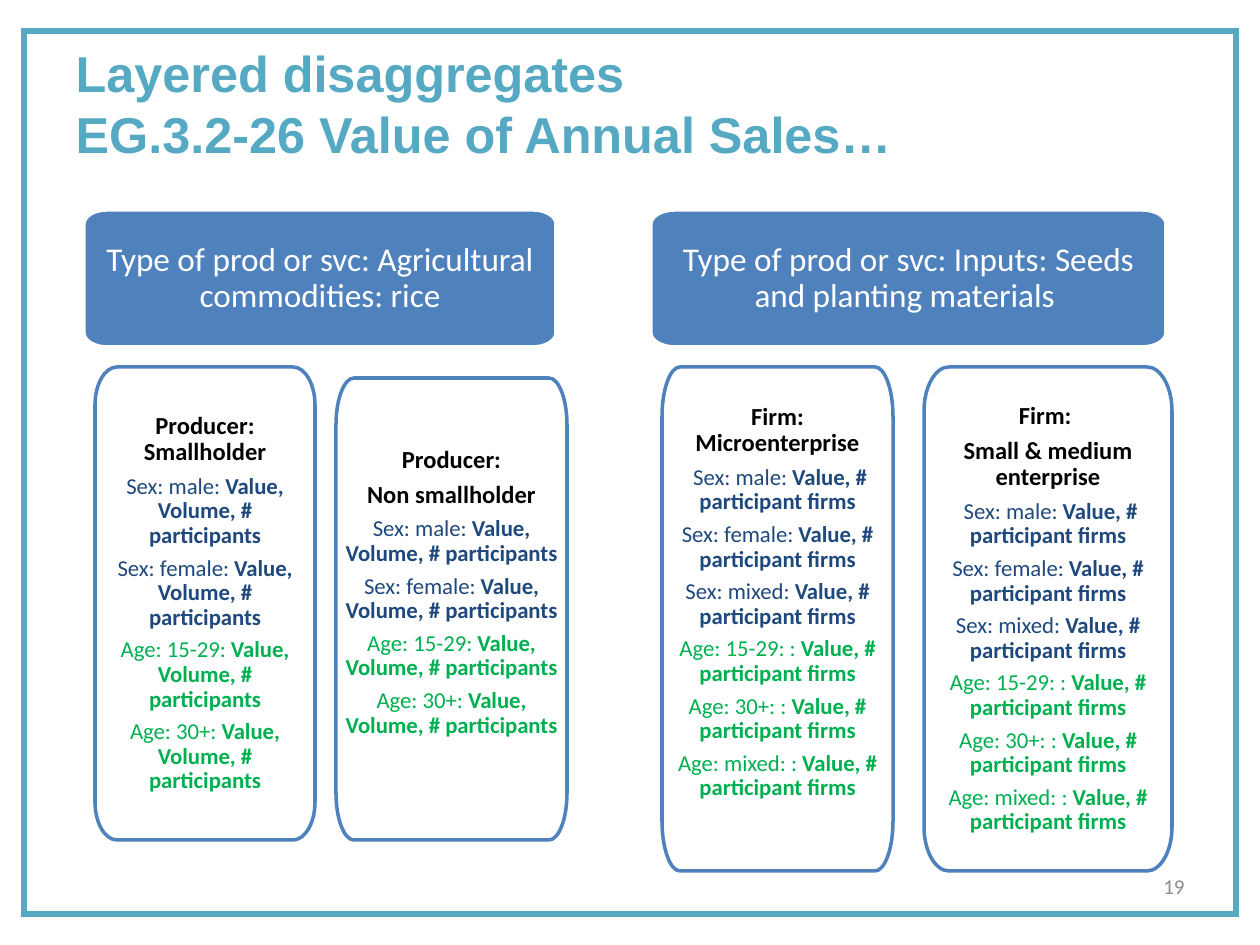
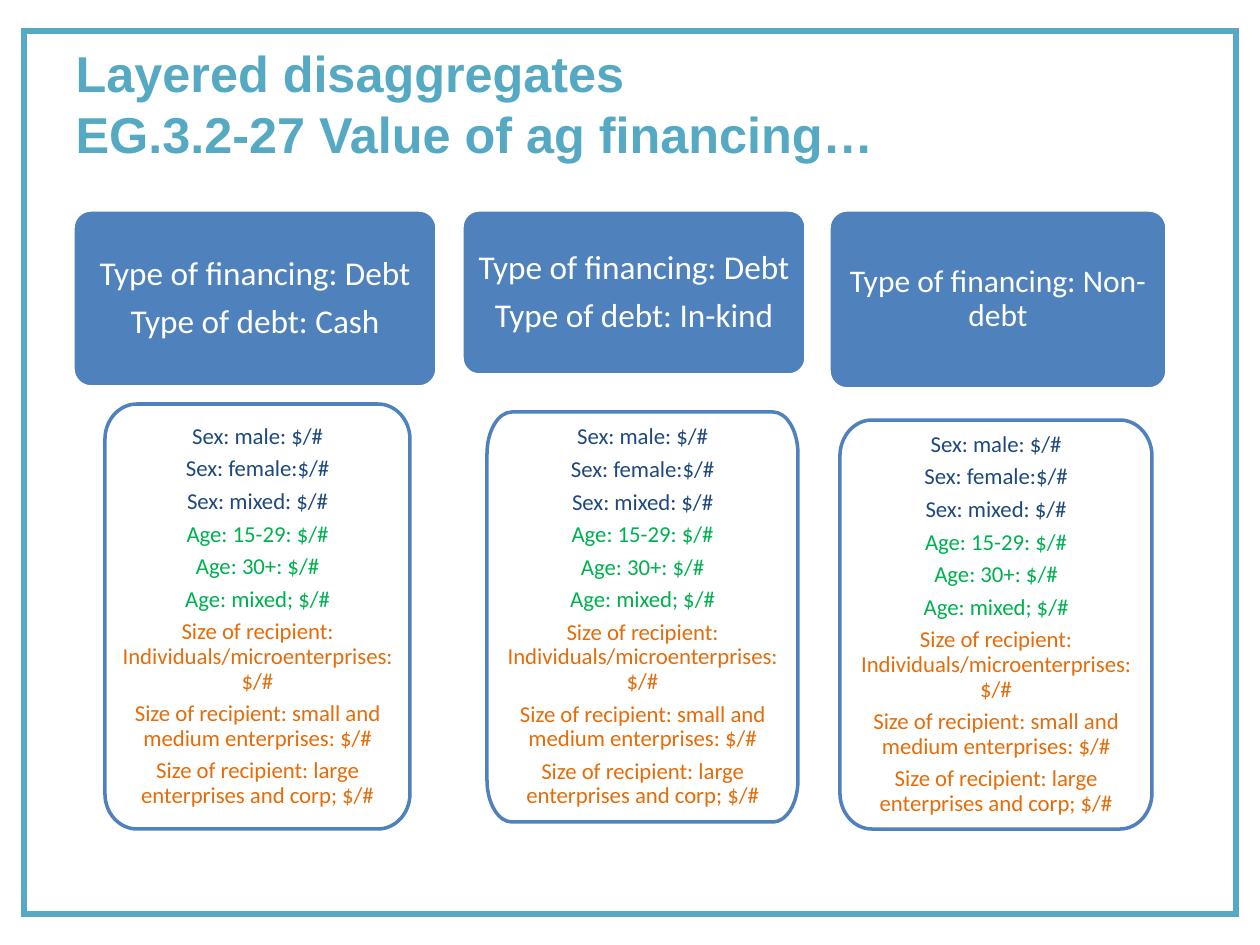
from lxml import etree
from pptx import Presentation
from pptx.dml.color import RGBColor
from pptx.enum.shapes import MSO_SHAPE
from pptx.enum.text import MSO_ANCHOR, MSO_AUTO_SIZE, PP_ALIGN
from pptx.oxml.ns import qn
from pptx.util import Pt

RECTANGLE = MSO_SHAPE.RECTANGLE
MIDDLE = MSO_ANCHOR.MIDDLE
FIXED_SIZE = MSO_AUTO_SIZE.NONE
LEFT, CENTER, RIGHT = PP_ALIGN.LEFT, PP_ALIGN.CENTER, PP_ALIGN.RIGHT

TEAL = RGBColor(0x55, 0xA9, 0xC2)
BLUE = RGBColor(0x4F, 0x81, 0xBD)
NAVY = RGBColor(0x1F, 0x49, 0x7D)
GREEN = RGBColor(0x00, 0xB0, 0x50)
ORANGE = RGBColor(0xE4, 0x6C, 0x0A)
BLACK = RGBColor(0, 0, 0)
WHITE = RGBColor(255, 255, 255)
GRAY = RGBColor(0x8C, 0x8C, 0x8C)

PX_PER_INCH = 126
SLIDE_SIZE = (1260, 945)
FRAME_BOX = (24, 31, 1212, 883)
TITLE_BOX = (63, 38, 1134, 130)
NUMBER_BOX = (903, 861, 294, 50)
TITLE_LAYOUT = 5
CURVE_PULL = 0.55
TITLE_SIZE, HEADER_SIZE, HEADING_SIZE, DETAIL_SIZE = 28.8, 19, 14, 13

PRODUCER_MEASURE = "Value, Volume, # participants"
FIRM_MEASURE = "Value, # participant firms"
PRODUCER_GROUPS = [
    ("Sex: male: ", NAVY),
    ("Sex: female: ", NAVY),
    ("Age: 15-29: ", GREEN),
    ("Age: 30+: ", GREEN),
]
FIRM_GROUPS = [
    (" Sex: male: ", NAVY),
    ("Sex: female: ", NAVY),
    ("Sex: mixed: ", NAVY),
    ("Age: 15-29: : ", GREEN),
    ("Age: 30+: : ", GREEN),
    ("Age: mixed: : ", GREEN),
]
FINANCING_GROUPS = [
    ("Sex: male: $/#", NAVY),
    ("Sex: female:$/#", NAVY),
    ("Sex: mixed: $/#", NAVY),
    ("Age: 15-29: $/#", GREEN),
    ("Age: 30+: $/#", GREEN),
    ("Age: mixed; $/#", GREEN),
    ("Size of recipient: Individuals/microenterprises: $/#", ORANGE),
    ("Size of recipient: small and medium enterprises: $/#", ORANGE),
    ("Size of recipient: large enterprises and corp; $/#", ORANGE),
]


def header_lines(*texts, size=HEADER_SIZE):
    return [[(text, size, WHITE, False)] for text in texts]


def card_lines(headings, groups, measure=""):
    lines = [[(heading, HEADING_SIZE, BLACK, True)] for heading in headings]
    for label, color in groups:
        line = [(label, DETAIL_SIZE, color, False)]
        if measure:
            line.append((measure, DETAIL_SIZE, color, True))
        lines.append(line)
    return lines


FINANCING_LINES = card_lines([], FINANCING_GROUPS)

SLIDES = [
    {
        "title": ("Layered disaggregates", "EG.3.2-26 Value of Annual Sales…"),
        "number": "19",
        "headers": [
            {"box": (84, 210, 472, 137), "corner": (23, 14), "inset": 9,
             "lines": header_lines("Type of prod or svc: Agricultural commodities: rice")},
            {"box": (651, 210, 515, 137), "corner": (24, 14), "inset": 8,
             "lines": header_lines("Type of prod or svc: Inputs: Seeds and planting materials ")},
        ],
        "cards": [
            {"box": (95, 367, 220, 473), "corner": (22, 38), "inset": 11,
             "lines": card_lines(["Producer: Smallholder"], PRODUCER_GROUPS, PRODUCER_MEASURE)},
            {"box": (336, 378, 231, 462), "corner": (18, 47), "inset": 9, "lift": 33,
             "lines": card_lines([" Producer: ", "Non smallholder"], PRODUCER_GROUPS, PRODUCER_MEASURE)},
            {"box": (662, 367, 231, 504), "corner": (18, 50), "inset": 9, "lift": 33,
             "lines": card_lines(["Firm: Microenterprise"], FIRM_GROUPS, FIRM_MEASURE)},
            {"box": (924, 367, 248, 504), "corner": (25, 44), "inset": 11,
             "lines": card_lines(["Firm: ", "Small & medium enterprise"], FIRM_GROUPS, FIRM_MEASURE)},
        ],
    },
    {
        "title": ("Layered disaggregates", "EG.3.2-27 Value of ag financing…"),
        "headers": [
            {"box": (73, 210, 364, 177), "corner": (18, 18), "inset": 9,
             "lines": header_lines("Type of financing: Debt", "Type of debt: Cash")},
            {"box": (462, 210, 344, 165), "corner": (17, 17), "inset": 8,
             "lines": header_lines("Type of financing: Debt", "Type of debt: In-kind")},
            {"box": (829, 210, 338, 179), "corner": (18, 18), "inset": 9,
             "lines": header_lines("Type of financing: Non-debt", size=18)},
        ],
        "cards": [
            {"box": (105, 404, 305, 425), "corner": (32, 35), "inset": 11, "lines": FINANCING_LINES},
            {"box": (487, 412, 311, 410), "corner": (25, 42), "inset": 9, "lines": FINANCING_LINES},
            {"box": (840, 420, 312, 409), "corner": (32, 36), "inset": 11, "lines": FINANCING_LINES},
        ],
    },
]


def emu(px):
    return round(px * 914400 / PX_PER_INCH)


def emus(values):
    return [emu(value) for value in values]


def add_run(paragraph, text, size, color, bold=False, font_name="Calibri"):
    run = paragraph.add_run()
    run.text = text
    run.font.name = font_name
    run.font.size = Pt(size)
    run.font.bold = bold
    run.font.color.rgb = color


def add_rounded_outline(slide, box, corner):
    left, top, width, height = emus(box)
    radius_x, radius_y = emus(corner)
    right, bottom = left + width, top + height
    vertices = [(left, top), (right, top), (right, bottom), (left, bottom)]
    points = [
        (left, top + radius_y), (left + radius_x, top),
        (right - radius_x, top), (right, top + radius_y),
        (right, bottom - radius_y), (right - radius_x, bottom),
        (left + radius_x, bottom), (left, bottom - radius_y),
    ]
    builder = slide.shapes.build_freeform(*points[0])
    builder.add_line_segments(points[1:], close=True)
    shape = builder.convert_to_shape()
    corner_lines = list(shape.element.iter(qn("a:lnTo")))[0:7:2]
    for index, (curve, vertex) in enumerate(zip(corner_lines, vertices)):
        curve.tag = qn("a:cubicBezTo")
        ends = points[2 * index:2 * index + 2]
        for position, end in enumerate(ends):
            x, y = [round(a + CURVE_PULL * (b - a)) for a, b in zip(end, vertex)]
            control = etree.Element(qn("a:pt"), x=str(x - left), y=str(y - top))
            curve.insert(position, control)
    return shape


def add_panel(slide, panel, fill_color, line_color):
    shape = add_rounded_outline(slide, panel["box"], panel["corner"])
    shape.shadow.inherit = False
    shape.fill.solid()
    shape.fill.fore_color.rgb = fill_color
    shape.line.color.rgb = line_color
    shape.line.width = Pt(2)
    frame = shape.text_frame
    frame.word_wrap = True
    frame.vertical_anchor = MIDDLE
    inset = emu(panel["inset"])
    frame.margin_left = frame.margin_right = frame.margin_top = inset
    frame.margin_bottom = inset + emu(panel.get("lift", 0))
    for index, line in enumerate(panel["lines"]):
        paragraph = frame.add_paragraph() if index else frame.paragraphs[0]
        paragraph.alignment = CENTER
        paragraph.line_spacing = 0.9
        paragraph.space_after = Pt(round(line[0][1] * 0.35, 2))
        for run in line:
            add_run(paragraph, *run)


def fill_title(slide, lines):
    title = slide.shapes.title
    title.left, title.top, title.width, title.height = emus(TITLE_BOX)
    frame = title.text_frame
    frame.auto_size = FIXED_SIZE
    frame.vertical_anchor = MIDDLE
    paragraph = frame.paragraphs[0]
    paragraph.alignment = LEFT
    for index, line in enumerate(lines):
        if index:
            paragraph.add_line_break()
        add_run(paragraph, line, TITLE_SIZE, TEAL, True, "Arial")


def add_number(slide, number):
    frame = slide.shapes.add_textbox(*emus(NUMBER_BOX)).text_frame
    frame.word_wrap = True
    frame.vertical_anchor = MIDDLE
    frame.paragraphs[0].alignment = RIGHT
    add_run(frame.paragraphs[0], number, 12, GRAY)


def add_master_frame(presentation, slide):
    border = slide.shapes.add_shape(RECTANGLE, *emus(FRAME_BOX))
    border.shadow.inherit = False
    border.fill.background()
    border.line.color.rgb = TEAL
    border.line.width = Pt(3)
    outline = next(border.element.iter(qn("a:ln")))
    etree.SubElement(outline, qn("a:miter"), lim="800000")
    presentation.slide_master.shapes.element.insert(2, border.element)


def main():
    presentation = Presentation()
    presentation.slide_width, presentation.slide_height = emus(SLIDE_SIZE)
    layout = presentation.slide_layouts[TITLE_LAYOUT]
    for content in SLIDES:
        slide = presentation.slides.add_slide(layout)
        fill_title(slide, content["title"])
        for header in content["headers"]:
            add_panel(slide, header, BLUE, WHITE)
        for card in content["cards"]:
            add_panel(slide, card, WHITE, BLUE)
        if "number" in content:
            add_number(slide, content["number"])
    add_master_frame(presentation, presentation.slides[0])
    presentation.save("out.pptx")


if __name__ == "__main__":
    main()
